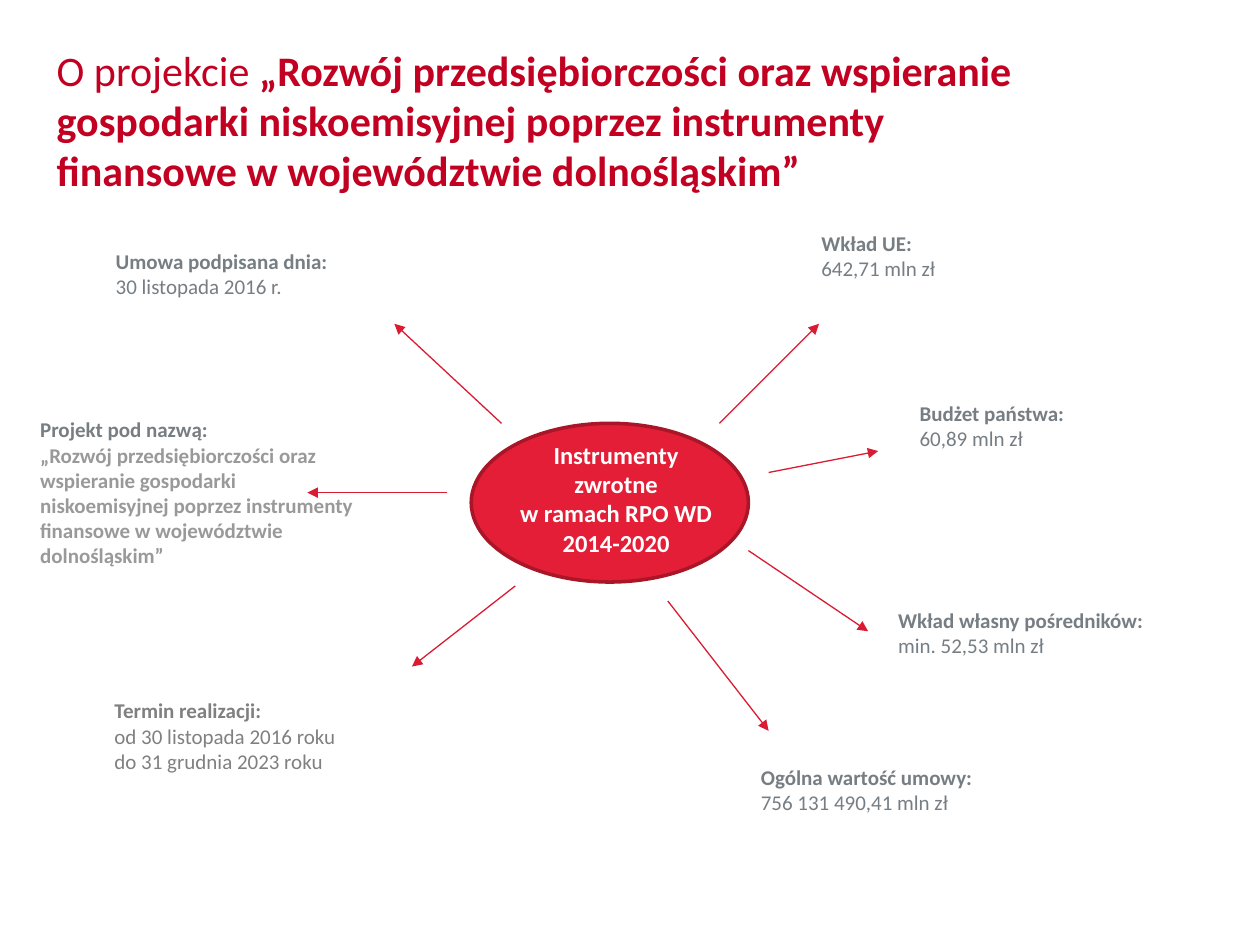
from pptx import Presentation
from pptx.dml.color import RGBColor
from pptx.enum.shapes import MSO_CONNECTOR, MSO_SHAPE
from pptx.enum.text import MSO_ANCHOR, MSO_AUTO_SIZE, PP_ALIGN
from pptx.oxml.ns import qn
from pptx.util import Inches, Pt
from lxml import etree

STRAIGHT = MSO_CONNECTOR.STRAIGHT
OVAL = MSO_SHAPE.OVAL
TOP = MSO_ANCHOR.TOP
NO_AUTOFIT = MSO_AUTO_SIZE.NONE
LEFT, CENTER = PP_ALIGN.LEFT, PP_ALIGN.CENTER

FONT = "Calibri"
TITLE_RED = RGBColor(0xC2, 0x00, 0x21)
HUB_RED = RGBColor(0xE3, 0x1E, 0x36)
HUB_EDGE = RGBColor(0xA8, 0x16, 0x28)
ARROW_RED = RGBColor(0xDA, 0x1B, 0x33)
SLATE = RGBColor(0x76, 0x7E, 0x84)
GRAY = RGBColor(0x80, 0x80, 0x80)
LIGHT_GRAY = RGBColor(0x99, 0x99, 0x99)
WHITE = RGBColor(0xFF, 0xFF, 0xFF)

PROJECT = ("„Rozwój przedsiębiorczości oraz wspieranie gospodarki niskoemisyjnej "
           "poprzez instrumenty finansowe w województwie dolnośląskim”")

ARROWS = [
    (5.71, 3.36, 6.5, 2.57),
    (6.1, 3.75, 6.97, 3.58),
    (3.98, 3.36, 3.13, 2.57),
    (3.55, 3.91, 2.44, 3.91),
    (4.09, 4.65, 3.27, 5.29),
    (5.94, 4.37, 6.89, 5.01),
    (5.3, 4.77, 6.1, 5.8),
]

FACTS = [
    (6.42, 1.78, 3.07, 0.5, "Wkład UE:", "642,71 mln zł"),
    (7.2, 3.13, 2.7, 0.5, "Budżet państwa:", "60,89 mln zł"),
    (7.03, 4.77, 2.56, 0.5, "Wkład własny pośredników:", "min. 52,53 mln zł"),
    (5.94, 6.02, 2.91, 0.5, "Ogólna wartość umowy:", "756 131 490,41 mln zł"),
    (0.82, 1.92, 3.7, 0.5, "Umowa podpisana dnia:", "30 listopada 2016 r."),
]


def style(font, size, color, bold):
    font.name = FONT
    font.size = Pt(size)
    font.color.rgb = color
    font.bold = bold


def add_title(slide):
    title = slide.shapes.title
    title.left, title.top = Inches(0.35), Inches(0.3)
    title.width, title.height = Inches(7.81), Inches(1.25)
    frame = title.text_frame
    frame.auto_size = NO_AUTOFIT
    frame.vertical_anchor = TOP
    para = frame.paragraphs[0]
    para.alignment = LEFT
    style(para.font, 24, TITLE_RED, False)
    para.add_run().text = "O projekcie "
    name = para.add_run()
    name.text = PROJECT
    name.font.bold = True


def add_text_box(slide, left, top, width, height):
    box = slide.shapes.add_textbox(Inches(left), Inches(top), Inches(width), Inches(height))
    box.text_frame.word_wrap = True
    return box.text_frame


def add_hub(slide):
    hub = slide.shapes.add_shape(OVAL, Inches(3.74), Inches(3.36), Inches(2.2), Inches(1.26))
    hub.shadow.inherit = False
    hub.fill.solid()
    hub.fill.fore_color.rgb = HUB_RED
    hub.line.color.rgb = HUB_EDGE
    hub.line.width = Pt(2)
    para = add_text_box(slide, 4, 3.44, 1.78, 1.04).paragraphs[0]
    para.text = "Instrumenty\vzwrotne\vw ramach RPO WD\v2014-2020"
    para.alignment = CENTER
    style(para.font, 14, WHITE, True)


def add_arrow(slide, x1, y1, x2, y2):
    arrow = slide.shapes.add_connector(STRAIGHT, Inches(x1), Inches(y1), Inches(x2), Inches(y2))
    arrow.line.color.rgb = ARROW_RED
    arrow.line.width = Pt(0.75)
    etree.SubElement(arrow.line._get_or_add_ln(), qn("a:tailEnd"), type="triangle")
    etree.SubElement(arrow._element.spPr, qn("a:effectLst"))


def add_fact(slide, left, top, width, height, label, value,
             label_color=SLATE, value_color=SLATE, value_bold=False):
    frame = add_text_box(slide, left, top, width, height)
    heading = frame.paragraphs[0]
    heading.text = label
    style(heading.font, 12, label_color, True)
    detail = frame.add_paragraph()
    detail.text = value
    style(detail.font, 12, value_color, value_bold)


def main():
    deck = Presentation()
    deck.slide_width, deck.slide_height = Inches(10), Inches(7.5)
    slide = deck.slides.add_slide(deck.slide_layouts.get_by_name("Title Only"))
    add_title(slide)
    add_hub(slide)
    for arrow in ARROWS:
        add_arrow(slide, *arrow)
    for fact in FACTS:
        add_fact(slide, *fact)
    add_fact(slide, 0.22, 3.26, 2.81, 1.31, "Projekt pod nazwą:", PROJECT,
             value_color=LIGHT_GRAY, value_bold=True)
    add_fact(slide, 0.81, 5.49, 2.01, 0.71, "Termin realizacji:",
             "od 30 listopada 2016 roku do 31 grudnia 2023 roku",
             label_color=GRAY, value_color=GRAY)
    deck.save("out.pptx")


if __name__ == "__main__":
    main()
